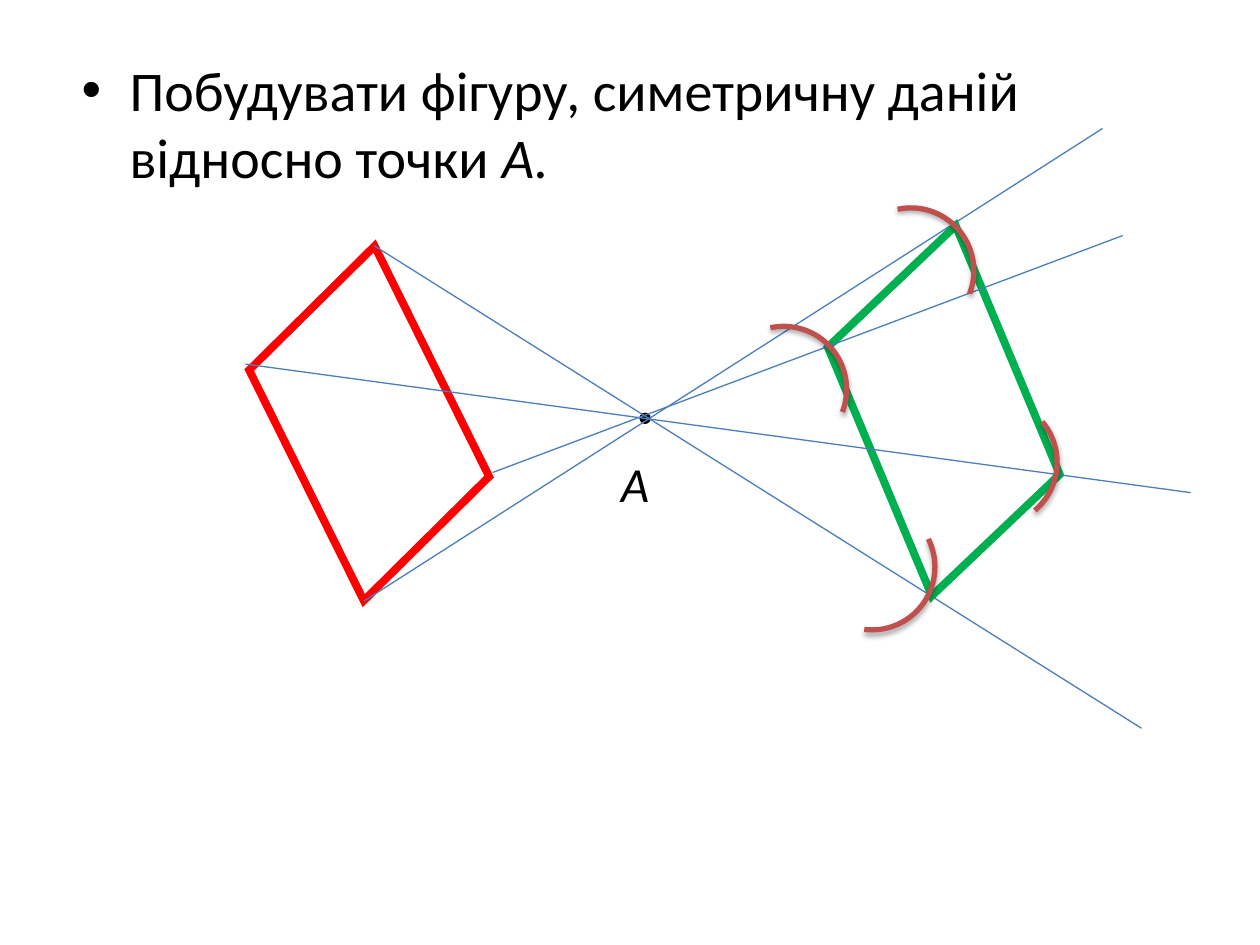
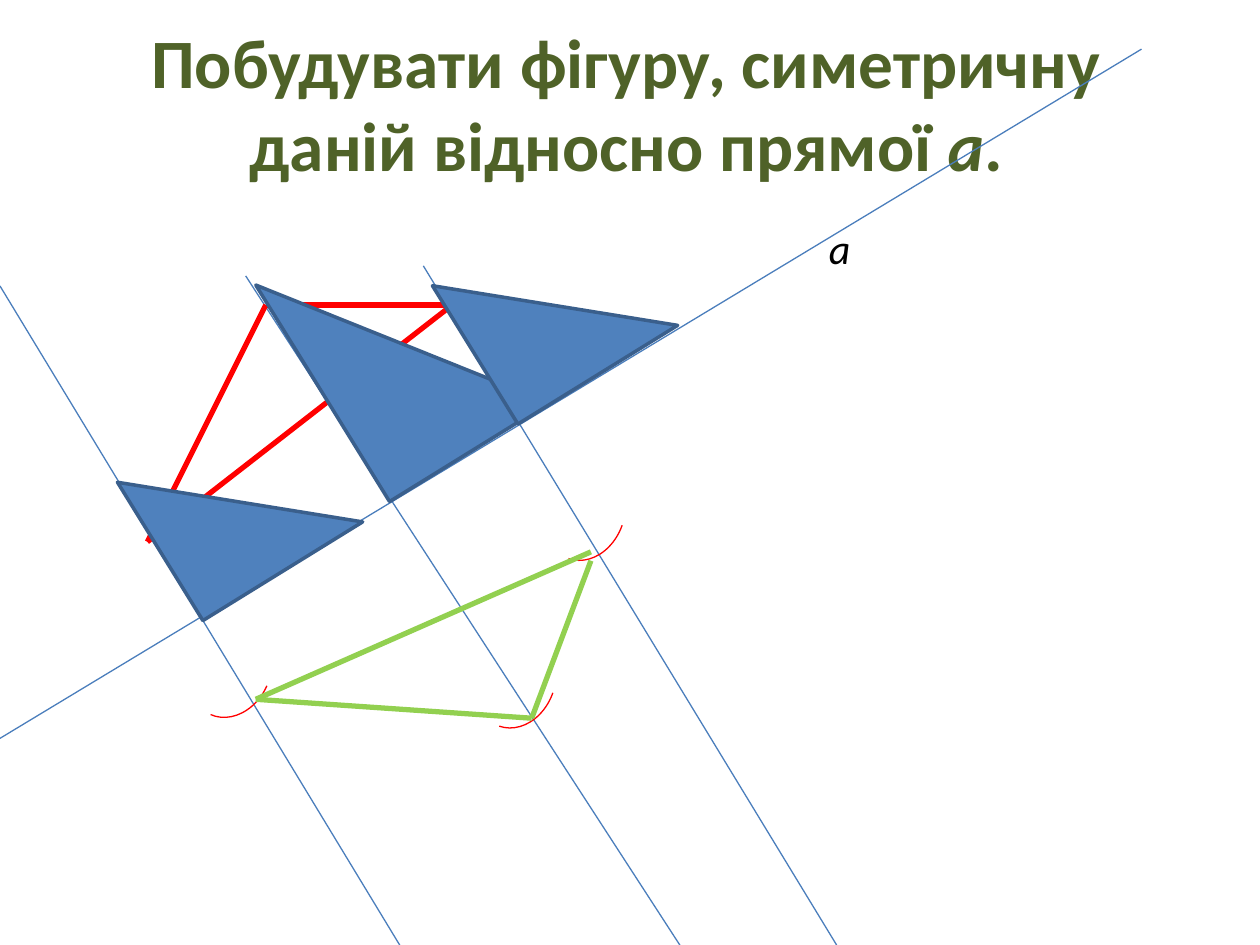
from dataclasses import dataclass
from typing import Optional, Union

from lxml import etree
from pptx import Presentation, util as u
from pptx.dml.color import RGBColor
from pptx.enum import shapes, text
from pptx.oxml import ns

PX = 9144  # 100 px to the inch
FONT = "Calibri"

BLACK = RGBColor(0x00, 0x00, 0x00)
WHITE = RGBColor(0xFF, 0xFF, 0xFF)
RED = RGBColor(0xFF, 0x00, 0x00)
GREEN = RGBColor(0x00, 0xB0, 0x50)
LIME = RGBColor(0x92, 0xD0, 0x50)
OLIVE = RGBColor(0x4F, 0x62, 0x28)
BRICK = RGBColor(0xC0, 0x50, 0x4D)
RULE_BLUE = RGBColor(0x4B, 0x7E, 0xBC)
BLUE = RGBColor(0x4F, 0x81, 0xBD)
DARK_BLUE = RGBColor(0x3A, 0x5F, 0x8C)

Kind = shapes.MSO_SHAPE
Box = tuple[int, int, int, int]
Point = tuple[int, int]


@dataclass(frozen=True)
class Segment:
    start: Point
    end: Point
    color: RGBColor = RULE_BLUE
    width: float = 0.75


@dataclass(frozen=True)
class Figure:
    kind: Kind
    box: Box
    line: RGBColor
    width: float
    rotation: float = 0
    fill: Optional[RGBColor] = None
    adjustments: tuple[float, ...] = ()
    sharp: bool = False
    shadow: bool = False


@dataclass(frozen=True)
class Words:
    box: Box
    runs: tuple[tuple[str, bool], ...]  # wording, italic
    size: float
    color: RGBColor = BLACK
    bold: bool = False
    centered: bool = False
    bullet: bool = False
    wrap: bool = True
    bottom_inset: int = 5


Item = Union[Segment, Figure, Words]


def px(*lengths: int) -> list[int]:
    return [u.Emu(length * PX) for length in lengths]


def add_child(parent, tag: str, **attributes: str):
    return etree.SubElement(parent, ns.qn(tag), attributes)


def draw_segment(slide, segment: Segment) -> None:
    line = slide.shapes.add_connector(
        shapes.MSO_CONNECTOR.STRAIGHT, *px(*segment.start, *segment.end))
    line.line.color.rgb = segment.color
    line.line.width = u.Pt(segment.width)
    add_child(line._element.spPr, "a:effectLst")


def draw_figure(slide, figure: Figure) -> None:
    shape = slide.shapes.add_shape(figure.kind, *px(*figure.box))
    shape.rotation = figure.rotation
    for index, value in enumerate(figure.adjustments):
        shape.adjustments[index] = value
    if figure.fill is None:
        shape.fill.background()
    else:
        shape.fill.solid()
        shape.fill.fore_color.rgb = figure.fill
    shape.line.color.rgb = figure.line
    shape.line.width = u.Pt(figure.width)
    shape.shadow.inherit = False
    properties = shape._element.spPr
    if figure.sharp:
        add_child(properties.find(ns.qn("a:ln")), "a:miter", lim="800000")
    if figure.shadow:
        shadow = add_child(properties.find(ns.qn("a:effectLst")), "a:outerShdw",
                           blurRad=str(u.Pt(3.1)), dist=str(u.Pt(1.8)),
                           dir="5400000", rotWithShape="0")
        color = add_child(shadow, "a:srgbClr", val=str(BLACK))
        add_child(color, "a:alpha", val="35000")


def draw_words(slide, words: Words) -> None:
    frame = slide.shapes.add_textbox(*px(*words.box)).text_frame
    frame.word_wrap = words.wrap
    frame.margin_bottom = px(words.bottom_inset)[0]
    if not words.wrap:
        frame.auto_size = text.MSO_AUTO_SIZE.SHAPE_TO_FIT_TEXT
    paragraph = frame.paragraphs[0]
    if words.centered:
        frame.vertical_anchor = text.MSO_ANCHOR.MIDDLE
        paragraph.alignment = text.PP_ALIGN.CENTER
    if words.bullet:
        properties = paragraph._p.get_or_add_pPr()
        indent = px(38)[0]
        properties.set("marL", str(indent))
        properties.set("indent", str(-indent))
        add_child(properties, "a:buFont", typeface="Arial")
        add_child(properties, "a:buChar", char="•")
    font = paragraph.font
    font.name = FONT
    font.size = u.Pt(words.size)
    font.bold = words.bold
    font.color.rgb = words.color
    for wording, italic in words.runs:
        run = paragraph.add_run()
        run.text = wording
        run.font.italic = italic


def draw(slide, items: list[Item]) -> None:
    painters = {Segment: draw_segment, Figure: draw_figure, Words: draw_words}
    for item in items:
        painters[type(item)](slide, item)


def label(letter: str, box: Box, size: float) -> Words:
    return Words(box, ((letter, True),), size, wrap=False)


def quadrilateral(box: Box, color: RGBColor, rotation: float, slant: float) -> Figure:
    return Figure(Kind.PARALLELOGRAM, box, color, 4.5, rotation, WHITE, (slant,), sharp=True)


def compass_mark(left: int, top: int, rotation: float, sweep_end: float = 19.98) -> Figure:
    return Figure(Kind.ARC, (left, top, 100, 100), BRICK, 3, rotation,
                  adjustments=(162, sweep_end), shadow=True)


def set_square(left: int, top: int, height: int = 129) -> Figure:
    return Figure(Kind.RIGHT_TRIANGLE, (left, top, 149, height), DARK_BLUE, 2, 328.3, BLUE)


def thin_mark(left: int, top: int, rotation: float) -> Figure:
    return Figure(Kind.ARC, (left, top, 78, 63), RED, 0.75, rotation)


def triangle(first: Point, second: Point, third: Point) -> list[Segment]:
    return [Segment(start, end, RED, 3)
            for start, end in ((first, second), (first, third), (second, third))]


# Symmetry about a point
POINT_SYMMETRY: list[Item] = [
    Words((55, 39, 900, 495),
          (("Побудувати фігуру, симетричну даній відносно точки ", False), ("А.", True)),
          32, bullet=True),
    quadrilateral((191, 239, 204, 194), RED, 315.3, 0.33),
    Figure(Kind.OVAL, (508, 328, 8, 8), BLACK, 0.75, fill=BLACK),
    Segment((297, 195), (906, 578)),
    Segment((289, 477), (875, 102)),
    quadrilateral((641, 226, 216, 200), GREEN, 136.5, 0.38),
    Segment((391, 375), (891, 187)),
    Segment((195, 289), (945, 391)),
    compass_mark(739, 317, 49.8, 0),
    compass_mark(673, 165, 347.8),
    compass_mark(642, 400, 63.7),
    compass_mark(572, 259, 347.8),
    label("А", (483, 355, 43, 57), 28),
]

# Symmetry about a line; the reflected triangle stays slightly open at its right corner
LEFT_CORNER, BOTTOM_CORNER = (203, 555), (422, 570)
LINE_SYMMETRY: list[Item] = [
    Words((47, 62, 900, 95),
          (("Побудувати фігуру, симетричну даній відносно прямої ", False),
           ("а", True), (".", False)),
          39.6, OLIVE, bold=True, centered=True, bottom_inset=61),
    Segment((0, 586), (906, 39)),
    label("а", (648, 172, 38, 50), 24),
    Segment((336, 211), (664, 750)),
    Segment((195, 219), (570, 797)),
    Segment((0, 227), (336, 781)),
    *triangle((211, 242), (117, 430), (359, 242)),
    set_square(116, 334),
    set_square(245, 172, 202),
    set_square(366, 178),
    thin_mark(425, 375, 109.2),
    thin_mark(370, 508, 109.2),
    thin_mark(144, 500, 114),
    Segment(LEFT_CORNER, (469, 438), LIME, 3),
    Segment((469, 445), BOTTOM_CORNER, LIME, 3),
    Segment(LEFT_CORNER, BOTTOM_CORNER, LIME, 3),
]


def main() -> None:
    presentation = Presentation()
    presentation.slide_width, presentation.slide_height = px(1000, 750)
    blank = presentation.slide_layouts[6]
    for items in (POINT_SYMMETRY, LINE_SYMMETRY):
        draw(presentation.slides.add_slide(blank), items)
    presentation.save("out.pptx")


if __name__ == "__main__":
    main()
